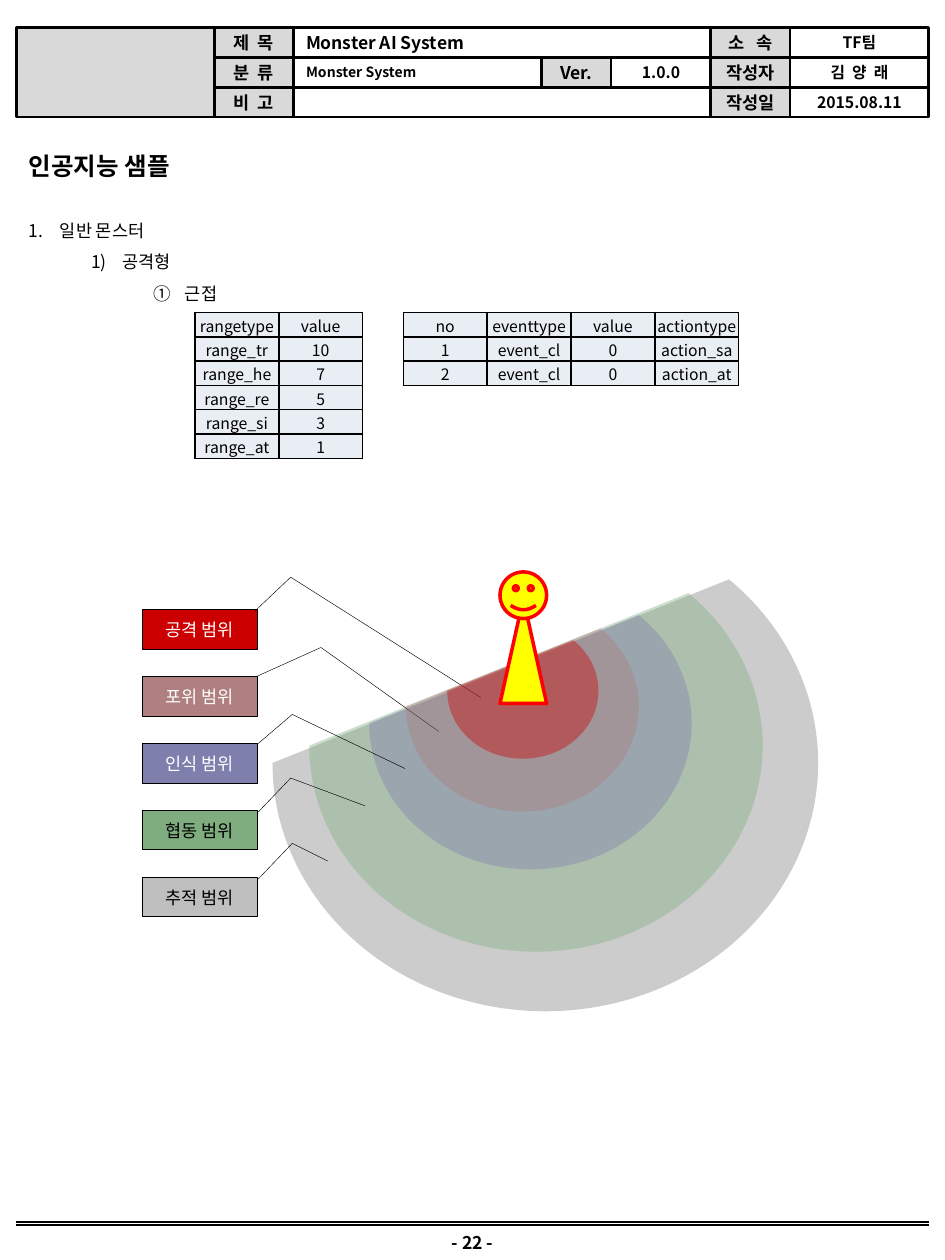
from lxml import etree
from pptx import Presentation
from pptx.dml.color import RGBColor
from pptx.enum.shapes import MSO_CONNECTOR, MSO_SHAPE
from pptx.enum.text import MSO_ANCHOR, PP_ALIGN
from pptx.oxml.ns import qn
from pptx.util import Cm, Pt

STRAIGHT = MSO_CONNECTOR.STRAIGHT
RECTANGLE = MSO_SHAPE.RECTANGLE
CHORD = MSO_SHAPE.CHORD
CALLOUT = MSO_SHAPE.LINE_CALLOUT_2
TRIANGLE = MSO_SHAPE.ISOSCELES_TRIANGLE
SMILEY = MSO_SHAPE.SMILEY_FACE
MIDDLE, TOP = MSO_ANCHOR.MIDDLE, MSO_ANCHOR.TOP
CENTER, LEFT = PP_ALIGN.CENTER, PP_ALIGN.LEFT

FONT = "Noto Sans CJK KR"
BLACK, WHITE, GREY = "000000", "FFFFFF", "D9D9D9"
CELL_FILL = "E9EDF4"

RANGES = [
    ("공격 범위", "CC0000", WHITE, (6.3, 2.52, 2.74, 3.05),
     (0.039, 0.982, -0.828, 1.295, 2.247, 2.955)),
    ("포위 범위", "B07F7F", WHITE, (5.54, 2.01, 4.24, 4.7),
     (-0.003, 0.997, -0.744, 1.559, 1.4, 2.587)),
    ("인식 범위", "7F7FAD", WHITE, (4.88, 1.45, 5.89, 6.5),
     (-0.003, 1.012, -0.744, 1.309, 0.638, 2.293)),
    ("협동 범위", "7FAD7F", BLACK, (3.78, 0.58, 8.31, 9.14),
     (0.039, 1.012, -0.828, 1.295, -0.124, 1.941)),
    ("추적 범위", "BFBFBF", BLACK, (3.12, 0, 10.01, 11),
     (0.039, 1.012, -0.871, 1.309, -0.42, 1.618)),
]
CHASE_CHORD_FILL = "808080"


def color(value):
    return RGBColor.from_string(value)


def write(para, text, align=LEFT, ink=BLACK, **formats):
    para.alignment = align
    span = para.add_run()
    span.text = text
    for name, value in {"name": FONT, "bold": False, **formats}.items():
        setattr(span.font, name, value)
    span.font.color.rgb = color(ink)
    etree.SubElement(span.font._element, qn("a:ea"), typeface=FONT)


def add_shape(shapes, kind, box, fill=None, line=None, weight=1.5):
    shape = shapes.add_shape(kind, *map(Cm, box))
    shape.shadow.inherit = False
    if fill:
        shape.fill.solid()
        shape.fill.fore_color.rgb = color(fill)
    else:
        shape.fill.background()
    if line:
        shape.line.color.rgb = color(line)
        shape.line.width = Pt(weight)
    else:
        shape.line.fill.background()
    return shape


def add_text_box(page, box, anchor=MIDDLE):
    frame = page.shapes.add_textbox(*map(Cm, box)).text_frame
    frame.word_wrap = True
    frame.vertical_anchor = anchor
    return frame


def build_header(page, left, top):
    row = 0.6
    cells = [
        (0, 0, 3.99, 3, "", GREY, 10),
        (15.6, 2, 2.79, 1, "2015.08.11", None, 9),
        (15.6, 0, 2.79, 1, "TF팀", None, 9),
        (15.6, 1, 2.79, 1, "김  양  래", None, 9),
        (14, 2, 1.6, 1, "작성일", GREY, 10),
        (14, 0, 1.6, 1, "소   속", GREY, 10),
        (14, 1, 1.6, 1, "작성자", GREY, 10),
        (5.59, 2, 8.41, 1, "", None, 10),
        (5.59, 0, 8.41, 1, "Monster AI System", None, 10),
        (11.99, 1, 2.01, 1, "1.0.0", None, 9),
        (3.99, 0, 1.6, 1, "제  목", GREY, 10),
        (10.59, 1, 1.4, 1, "Ver.", GREY, 10),
        (3.99, 1, 1.6, 1, "분  류", GREY, 10),
        (3.99, 2, 1.6, 1, "비  고", GREY, 10),
        (5.59, 1, 5, 1, "Monster System", None, 8),
    ]
    for x, index, width, span, text, fill, size in cells:
        box = (left + x, top + index * row, width, span * row)
        shape = add_shape(page.shapes, RECTANGLE, box, fill, BLACK)
        if not text:
            continue
        align = LEFT if text.startswith("Monster") else CENTER
        frame = shape.text_frame
        frame.vertical_anchor = MIDDLE
        frame.margin_left = frame.margin_right = Cm(0.25 if align == LEFT else 0)
        write(frame.paragraphs[0], text, align, size=Pt(size), bold=True)


def build_footer(page, left, top, width):
    for offset in (0, 0.05):
        y = Cm(top + offset)
        rule = page.shapes.add_connector(STRAIGHT, Cm(left), y, Cm(left + width), y)
        rule.line.color.rgb = color(BLACK)
        rule.line.width = Pt(1)
        etree.SubElement(rule._element.spPr, qn("a:effectLst"))
    frame = add_text_box(page, (left + width / 2 - 1, top + 0.05, 2, 0.71))
    write(frame.paragraphs[0], "- 22 -", CENTER, size=Pt(10), bold=True)


def build_title(page, box):
    para = add_text_box(page, box).paragraphs[0]
    para.line_spacing = 1.5
    write(para, "인공지능 샘플", size=Pt(14), bold=True)


def build_outline(page, box):
    frame = add_text_box(page, box, TOP)
    items = [("일반 몬스터", "arabicPeriod"), ("공격형", "arabicParenR"),
             ("근접", "circleNumDbPlain")]
    hang = 0.63
    for level, (text, numbering) in enumerate(items):
        para = frame.add_paragraph() if level else frame.paragraphs[0]
        para.level = level
        para.line_spacing = 1.5
        properties = para._p.get_or_add_pPr()
        properties.set("marL", str(Cm(hang * (1 + 2 * level))))
        properties.set("indent", str(-Cm(hang)))
        etree.SubElement(properties, qn("a:buAutoNum"), type=numbering)
        write(para, text, size=Pt(10))


def add_borders(cell):
    properties = cell._tc.get_or_add_tcPr()
    for index, side in enumerate(("lnL", "lnR", "lnT", "lnB")):
        line = etree.Element(qn(f"a:{side}"), w=str(Pt(1)))
        fill = etree.SubElement(line, qn("a:solidFill"))
        etree.SubElement(fill, qn("a:srgbClr"), val=BLACK)
        properties.insert(index, line)


def build_table(page, left, top, rows):
    width, height = 1.69, 0.49
    count = len(rows[0])
    table = page.shapes.add_table(len(rows), count, Cm(left), Cm(top),
                                  Cm(width * count), Cm(height * len(rows))).table
    table.first_row = table.horz_banding = False
    for column in table.columns:
        column.width = Cm(width)
    formats = {"margin_left": Cm(0.03), "margin_right": Cm(0.03),
               "margin_top": Cm(0.03), "margin_bottom": 0, "vertical_anchor": MIDDLE}
    for row, texts in zip(table.rows, rows):
        row.height = Cm(height)
        for cell, text in zip(row.cells, texts):
            for name, value in formats.items():
                setattr(cell, name, value)
            cell.fill.solid()
            cell.fill.fore_color.rgb = color(CELL_FILL)
            add_borders(cell)
            write(cell.text_frame.paragraphs[0], text, CENTER, size=Pt(9))


def add_chord(page, left, top, box, fill):
    x, y, width, height = box
    chord = add_shape(page.shapes, CHORD, (left + x, top + y, width, height), fill)
    chord.rotation = 270
    tint = chord._element.spPr.find(f"{qn('a:solidFill')}/{qn('a:srgbClr')}")
    etree.SubElement(tint, qn("a:alpha"), val="40000")


def add_callout(page, box, text, fill, ink, bends):
    callout = add_shape(page.shapes, CALLOUT, box, fill, BLACK, 0.25)
    for index, bend in enumerate(bends):
        callout.adjustments[index] = bend
    callout.text_frame.vertical_anchor = MIDDLE
    write(callout.text_frame.paragraphs[0], text, CENTER, ink, size=Pt(10))


def build_monster(page, left, top):
    parts = page.shapes.add_group_shape().shapes
    for kind, y, height in ((TRIANGLE, 0.54, 2.11), (SMILEY, 0, 0.94)):
        add_shape(parts, kind, (left, top + y, 0.94, height), "FFFF00", "FF0000", 2)


def build_range_diagram(page, left, top):
    inner, outer = RANGES[:2], RANGES[2:]
    for text, fill, ink, chord, bends in reversed(outer):
        shade = CHASE_CHORD_FILL if text == "추적 범위" else fill
        add_chord(page, left, top, chord, shade)
    for index, (text, fill, ink, chord, bends) in reversed(list(enumerate(RANGES))):
        box = (left, top + 2.41 + 1.35 * index, 2.31, 0.79)
        add_callout(page, box, text, fill, ink, bends)
    for text, fill, ink, chord, bends in reversed(inner):
        add_chord(page, left, top, chord, fill)
    build_monster(page, left + 7.21, top + 1.65)


def main():
    deck = Presentation()
    deck.slide_width, deck.slide_height = Cm(19.05), Cm(25.4)
    page = deck.slides.add_slide(deck.slide_layouts[6])
    left, width = 0.33, 18.39
    build_header(page, left, 0.56)
    build_footer(page, left, 24.64, width)
    build_outline(page, (left, 4.09, width, 20.19))
    build_title(page, (left, 2.69, width, 0.99))
    build_table(page, 3.93, 6.3, [
        ("rangetype", "value"), ("range_tr", "10"), ("range_he", "7"),
        ("range_re", "5"), ("range_si", "3"), ("range_at", "1")])
    build_table(page, 8.13, 6.3, [
        ("no", "eventtype", "value", "actiontype"),
        ("1", "event_cl", "0", "action_sa"),
        ("2", "event_cl", "0", "action_at")])
    build_range_diagram(page, 2.87, 9.88)
    deck.save("out.pptx")


if __name__ == "__main__":
    main()
